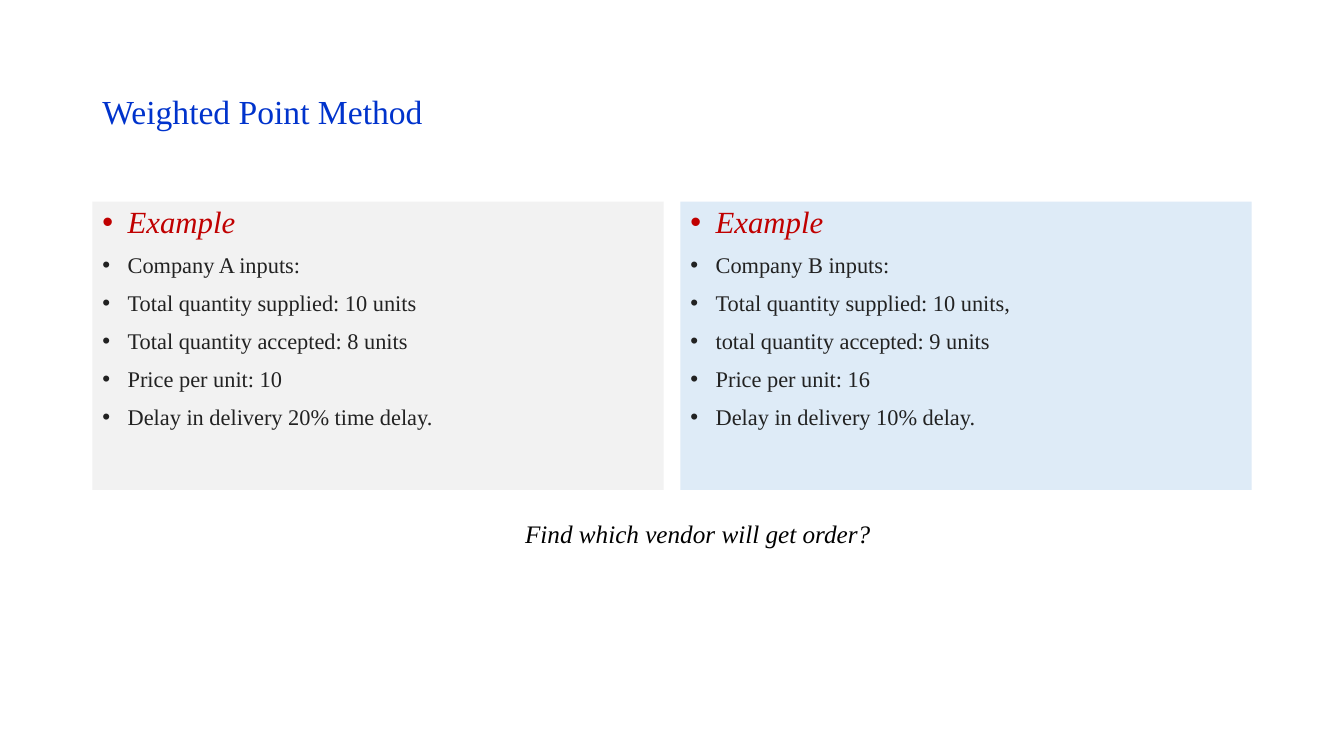
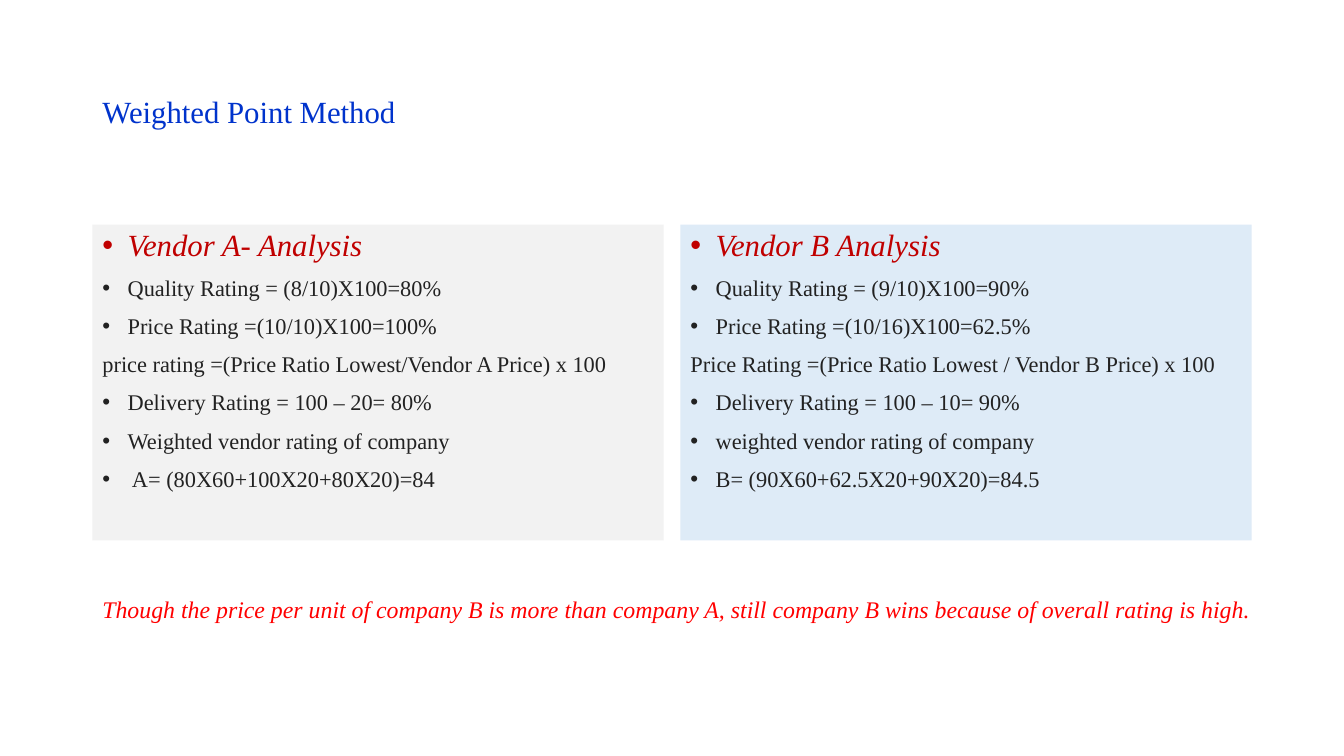
from lxml.etree import SubElement
from pptx import Presentation
from pptx.dml.color import RGBColor
from pptx.enum.text import MSO_ANCHOR, MSO_AUTO_SIZE, PP_ALIGN
from pptx.oxml.ns import qn
from pptx.util import Pt

# Shared style
FONT = "Times New Roman"
COLORS = {
    "title": "0033CC",
    "heading": "C00000",
    "body": "222222",
    "question": "000000",
    "verdict": "FF0000",
    "vendor_a": "F2F2F2",
    "vendor_b": "DEEBF7",
}
TWO_CONTENT_LAYOUT = 3
LEFT, PANEL_WIDTH, PANEL_GAP = 66, 408, 12
TITLE_TOP, TITLE_HEIGHT = 29, 104
BULLET_INDENT = 18

# Panel wording: heading first, then the lines
INPUTS_A = [
    "Example",
    "Company A inputs:",
    "Total quantity supplied: 10 units",
    "Total quantity accepted: 8 units",
    "Price per unit: 10",
    "Delay in delivery 20% time delay.",
]
INPUTS_B = [
    "Example",
    "Company B inputs:",
    "Total quantity supplied: 10 units,",
    "total quantity accepted: 9 units",
    "Price per unit: 16",
    "Delay in delivery 10% delay.",
]
ANALYSIS_A = [
    "Vendor A- Analysis",
    "Quality Rating = (8/10)X100=80%",
    "Price Rating =(10/10)X100=100%",
    "price rating =(Price Ratio Lowest/Vendor A Price) x 100",
    "Delivery Rating = 100 – 20= 80%",
    "Weighted vendor rating of company",
    " A= (80X60+100X20+80X20)=84",
]
ANALYSIS_B = [
    "Vendor B Analysis",
    "Quality Rating = (9/10)X100=90%",
    "Price Rating =(10/16)X100=62.5%",
    "Price Rating =(Price Ratio Lowest / Vendor B Price) x 100",
    "Delivery Rating = 100 – 10= 90%",
    "weighted vendor rating of company",
    "B= (90X60+62.5X20+90X20)=84.5",
]
FORMULA_LINE = 3


def place(shape, left, top, width, height):
    shape.left, shape.top = Pt(left), Pt(top)
    shape.width, shape.height = Pt(width), Pt(height)


def style_runs(paragraph, size, color, italic=False):
    for run in paragraph.runs:
        run.font.name = FONT
        run.font.size = Pt(size)
        run.font.italic = italic
        run.font.color.rgb = RGBColor.from_string(COLORS[color])


def set_bullet(paragraph, bulleted):
    properties = paragraph._p.get_or_add_pPr()
    indent = Pt(BULLET_INDENT) if bulleted else 0
    properties.set("marL", str(indent))
    properties.set("indent", str(-indent))
    if bulleted:
        SubElement(properties, qn("a:buFont")).set("typeface", "Arial")
        SubElement(properties, qn("a:buChar")).set("char", "•")
    else:
        SubElement(properties, qn("a:buNone"))


def add_titled_slide(deck, size):
    slide = deck.slides.add_slide(deck.slide_layouts[TWO_CONTENT_LAYOUT])
    title = slide.shapes.title
    place(title, LEFT, TITLE_TOP, 2 * PANEL_WIDTH + PANEL_GAP, TITLE_HEIGHT)
    frame = title.text_frame
    frame.text = "Weighted Point Method"
    frame.auto_size = MSO_AUTO_SIZE.NONE
    frame.vertical_anchor = MSO_ANCHOR.MIDDLE
    heading = frame.paragraphs[0]
    heading.alignment = PP_ALIGN.LEFT
    heading.line_spacing = 0.9
    style_runs(heading, size, "title")
    return slide


def fill_panel(panel, lines, fill, plain_line):
    panel.fill.solid()
    panel.fill.fore_color.rgb = RGBColor.from_string(COLORS[fill])
    frame = panel.text_frame
    frame.text = "\n".join(lines)
    frame.auto_size = MSO_AUTO_SIZE.NONE
    for number, paragraph in enumerate(frame.paragraphs):
        paragraph.line_spacing = 0.9
        paragraph.space_before = Pt(10)
        set_bullet(paragraph, number != plain_line)
        if number == 0:
            style_runs(paragraph, 22, "heading", italic=True)
        else:
            style_runs(paragraph, 16, "body")


def fill_panels(slide, top, height, lines_a, lines_b, plain_line=None):
    columns = ((lines_a, "vendor_a"), (lines_b, "vendor_b"))
    for column, (lines, fill) in enumerate(columns):
        panel = slide.placeholders[column + 1]
        place(panel, LEFT + column * (PANEL_WIDTH + PANEL_GAP), top,
              PANEL_WIDTH, height)
        fill_panel(panel, lines, fill, plain_line)


def add_remark(slide, text, left, top, width, height, size, color):
    remark = slide.shapes.add_textbox(Pt(left), Pt(top), Pt(width), Pt(height))
    frame = remark.text_frame
    frame.word_wrap = True
    frame.auto_size = MSO_AUTO_SIZE.SHAPE_TO_FIT_TEXT
    frame.text = text
    style_runs(frame.paragraphs[0], size, color, italic=True)


def main():
    deck = Presentation()
    deck.slide_width, deck.slide_height = Pt(960), Pt(540)

    # Inputs of both companies
    inputs = add_titled_slide(deck, 24)
    fill_panels(inputs, 144, 206, INPUTS_A, INPUTS_B)
    add_remark(inputs, "Find which vendor will get order?",
               368, 367, 480, 29, 18, "question")

    # Ratings and result
    analysis = add_titled_slide(deck, 22)
    fill_panels(analysis, 160.5, 225.5, ANALYSIS_A, ANALYSIS_B, FORMULA_LINE)
    add_remark(analysis,
               "Though the price per unit of company B is more than company A, "
               "still company B wins because of overall rating is high.",
               LEFT, 421, 847.5, 28, 17, "verdict")

    deck.save("out.pptx")


if __name__ == "__main__":
    main()
